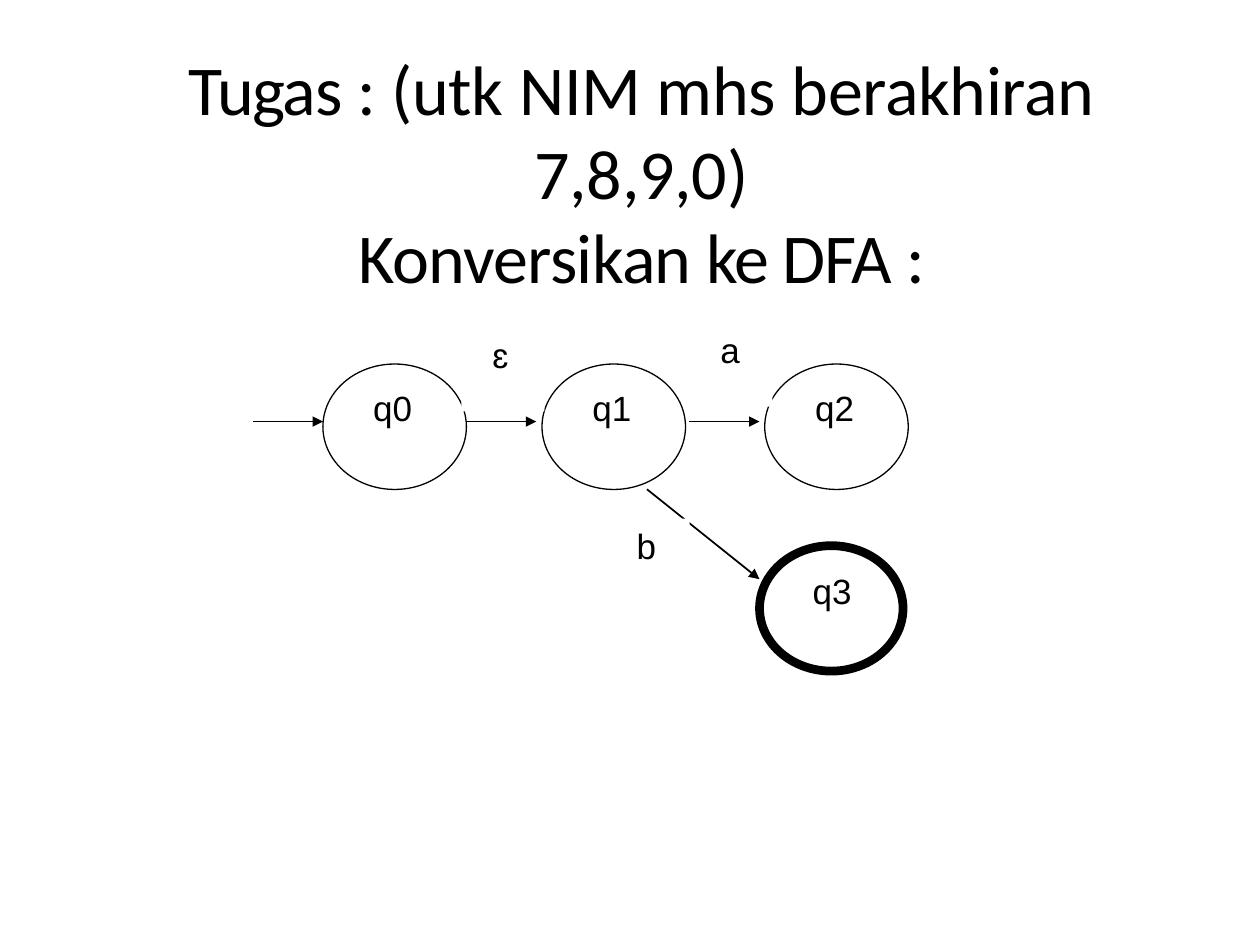
from pptx import Presentation
from pptx.dml.color import RGBColor
from pptx.enum.shapes import MSO_CONNECTOR, MSO_SHAPE
from pptx.enum.text import PP_ALIGN
from pptx.oxml.ns import qn
from pptx.util import Pt
from lxml import etree

OVAL, RECT = MSO_SHAPE.OVAL, MSO_SHAPE.RECTANGLE
STRAIGHT = MSO_CONNECTOR.STRAIGHT
LEFT, MID, RIGHT = PP_ALIGN.LEFT, PP_ALIGN.CENTER, PP_ALIGN.RIGHT
HUES = {"ink": "000000", "paper": "FFFFFF"}


class Board:
    """Draws the parts of a state diagram on one slide, in points."""

    def __init__(self, slide):
        self.shapes = slide.shapes
        self.ink = RGBColor.from_string(HUES["ink"])
        self.paper = RGBColor.from_string(HUES["paper"])

    def text(self, x, y, w, h, lines, size=20, font="Arial", inset=0.7):
        box = self.shapes.add_textbox(Pt(x), Pt(y), Pt(w), Pt(h))
        frame = box.text_frame
        frame.word_wrap = True
        frame.margin_left = frame.margin_right = frame.margin_bottom = 0
        frame.margin_top = Pt(inset)
        for i, (runs, align, before) in enumerate(lines):
            para = frame.add_paragraph() if i else frame.paragraphs[0]
            para.alignment = align
            para.space_before = Pt(before)
            para.font.size, para.font.name = Pt(size), font
            para.font.color.rgb = self.ink
            for words, track in runs:
                run = para.add_run()
                run.text = words
                if track:
                    run.font._element.set("spc", str(track))

    def label(self, x, y, w, words):
        self.text(x, y, w, 26, [([(words, 0)], LEFT, 1.1)])

    def state(self, x, y, weight=0.75):
        oval = self.shapes.add_shape(OVAL, Pt(x), Pt(y), Pt(82), Pt(71.7))
        oval.shadow.inherit = False
        oval.fill.background()
        oval.line.color.rgb = self.ink
        oval.line.width = Pt(weight)

    def arrow(self, x1, y1, x2, y2):
        line = self.shapes.add_connector(STRAIGHT, Pt(x1), Pt(y1), Pt(x2), Pt(y2))
        line.line.color.rgb = self.ink
        line.line.width = Pt(1)
        etree.SubElement(line.line._get_or_add_ln(), qn("a:tailEnd"), type="triangle")
        etree.SubElement(line._element.spPr, qn("a:effectLst"))

    def patch(self, x, y):
        rect = self.shapes.add_shape(RECT, Pt(x), Pt(y), Pt(47.4), Pt(47.4))
        rect.shadow.inherit = False
        rect.fill.solid()
        rect.fill.fore_color.rgb = self.paper
        rect.line.fill.background()


def main():
    deck = Presentation()
    deck.slide_width, deck.slide_height = Pt(720), Pt(540)
    board = Board(deck.slides.add_slide(deck.slide_layouts[6]))

    head = [("Tugas ", -70), (": (utk NIM mhs ", -10), ("berakhiran ", -20), ("7,8,9,0)", -10)]
    task = [("Konversikan ", -40), ("ke DFA ", -80), (":", -10)]
    board.text(103, 25.2, 527, 146, [(head, MID, 0.9), (task, MID, 0)], 40, "Calibri")

    for i, x in enumerate((184.5, 309.7, 437)):
        board.state(x, 208)
        board.label(x + 28.8, 220.3, 24.5, f"q{i}")
    board.state(434, 311.8, 5)

    for x in (144.6, 266.5, 394):
        board.arrow(x, 240.9, x + 40, 240.9)
    board.arrow(369.7, 279.6, 434, 331)

    for x, y, words in ((394, 185, "a"), (263.7, 187.7, "ɛ")):
        board.patch(x, y)
        board.label(x + 17.6, y + 2.2, 13, words)
    board.patch(346.8, 296.4)
    board.text(363.8, 296.6, 122.9, 54,
               [([("b", 0)], LEFT, 2.9), ([("q3", 0)], RIGHT, 1.9)], inset=2.9)

    deck.save("out.pptx")


if __name__ == "__main__":
    main()
